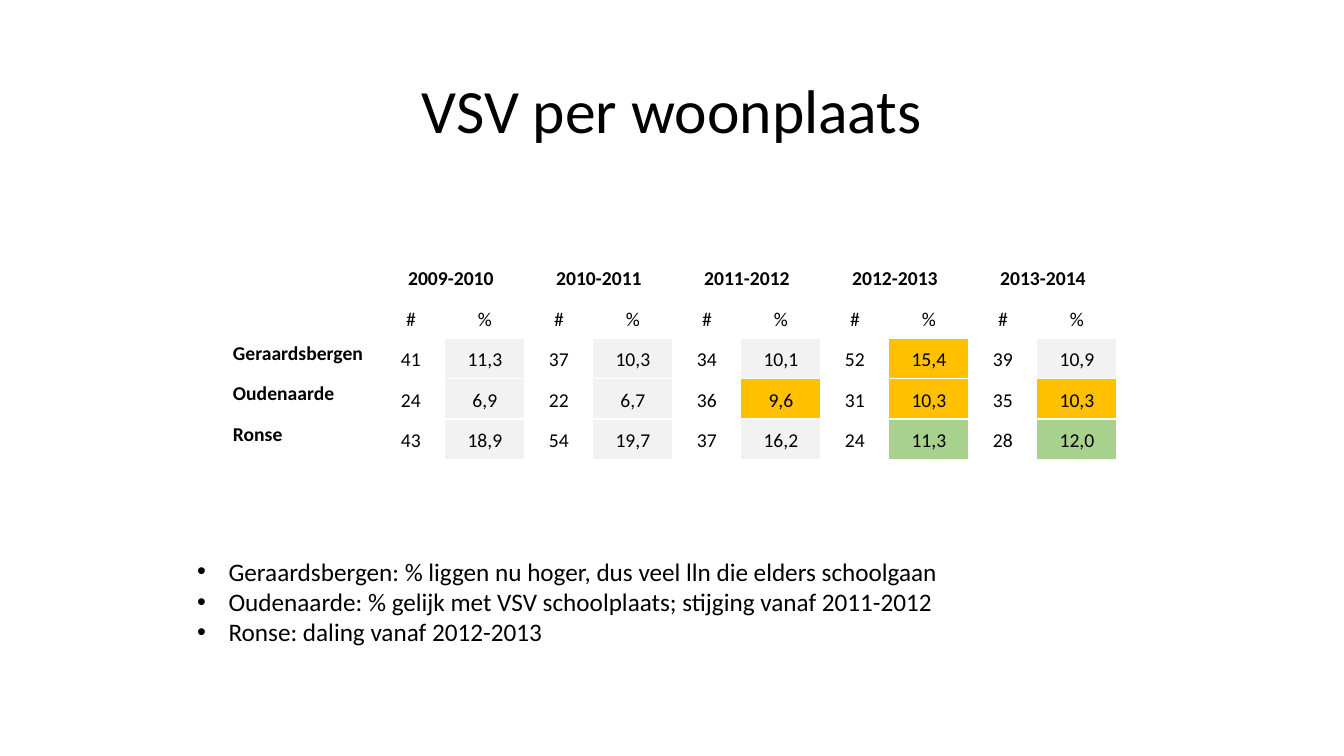
from lxml import etree
from pptx import Presentation
from pptx.dml.color import RGBColor
from pptx.enum.text import MSO_ANCHOR, MSO_AUTO_SIZE, PP_ALIGN
from pptx.oxml.ns import qn
from pptx.util import Cm, Pt

CENTER, LEFT = PP_ALIGN.CENTER, PP_ALIGN.LEFT
MIDDLE, TOP = MSO_ANCHOR.MIDDLE, MSO_ANCHOR.TOP
GROW = MSO_AUTO_SIZE.SHAPE_TO_FIT_TEXT

WHITE, GREY, AMBER, GREEN = "FFFFFF", "F2F2F2", "FFC000", "A9D18E"
TITLE_FONT = {"size": Pt(44)}
CELL_FONT = {"size": Pt(14), "bold": False}
HEADING_FONT = {"size": Pt(14), "bold": True}
BULLET_FONT = {"size": Pt(18)}

YEARS = ["2009-2010", "2010-2011", "2011-2012", "2012-2013", "2013-2014"]
TOWNS = {
    "Geraardsbergen": ["41", "11,3", "37", "10,3", "34", "10,1", "52", "15,4", "39", "10,9"],
    "Oudenaarde": ["24", "6,9", "22", "6,7", "36", "9,6", "31", "10,3", "35", "10,3"],
    "Ronse": ["43", "18,9", "54", "19,7", "37", "16,2", "24", "11,3", "28", "12,0"],
}
# Highlighted school years for each town
HIGHLIGHTS = {
    "Geraardsbergen": (AMBER, ["2012-2013"]),
    "Oudenaarde": (AMBER, ["2011-2012", "2012-2013", "2013-2014"]),
    "Ronse": (GREEN, ["2012-2013", "2013-2014"]),
}
REMARKS = [
    "Geraardsbergen: % liggen nu hoger, dus veel lln die elders schoolgaan",
    "Oudenaarde: % gelijk met VSV schoolplaats; stijging vanaf 2011-2012",
    "Ronse: daling vanaf 2012-2013",
]


def color(value):
    return RGBColor.from_string(value)


def write(para, text, font_format, align=LEFT, spacing=1.0):
    para.alignment = align
    para.line_spacing = spacing
    span = para.add_run()
    span.text = text
    for name, value in {"name": "Calibri", **font_format}.items():
        setattr(span.font, name, value)
    span.font.color.rgb = color("000000")


def add_border(cell, side, width):
    line = etree.SubElement(cell._tc.get_or_add_tcPr(), qn("a:" + side), w=str(Pt(width)))
    fill = etree.SubElement(line, qn("a:solidFill"))
    etree.SubElement(fill, qn("a:srgbClr"), val=WHITE)


def style_cell(cell, fill, bottom_width=1):
    cell_format = {"margin_left": Cm(0.13), "margin_right": Cm(0.13),
                   "margin_top": 0, "margin_bottom": 0, "vertical_anchor": MIDDLE}
    for name, value in cell_format.items():
        setattr(cell, name, value)
    for side in ("lnL", "lnR", "lnT"):
        add_border(cell, side, 1)
    add_border(cell, "lnB", bottom_width)
    cell.fill.solid()
    cell.fill.fore_color.rgb = color(fill)


def fill_cell(cell, text, font_format=CELL_FONT, align=CENTER):
    write(cell.text_frame.paragraphs[0], text, font_format, align, 1.15)


def add_title(page, box):
    frame = page.shapes.add_textbox(*box).text_frame
    frame.word_wrap = True
    frame.vertical_anchor = MIDDLE
    write(frame.paragraphs[0], "VSV per woonplaats", TITLE_FONT, CENTER, 0.9)


def cell_fill(row, column):
    if row < 2 or column == 0 or column % 2:
        return WHITE
    highlight, years = HIGHLIGHTS[list(TOWNS)[row - 2]]
    return highlight if YEARS[column // 2 - 1] in years else GREY


def add_figures(page, box):
    row_count, column_count = 2 + len(TOWNS), 1 + 2 * len(YEARS)
    table = page.shapes.add_table(row_count, column_count, *box).table
    table.first_row = table.horz_banding = False
    widths = [Cm(3.76)] + [Cm(1.71), Cm(2.02)] * len(YEARS)
    for column, width in zip(table.columns, widths):
        column.width = width
    for row in range(row_count):
        table.rows[row].height = box[3] // row_count
        for column in range(column_count):
            style_cell(table.cell(row, column), cell_fill(row, column), 1 if row else 3)

    # Year headings, each over a count and a percentage
    for index, year in enumerate(YEARS):
        first = 1 + 2 * index
        table.cell(0, first).merge(table.cell(0, first + 1))
        fill_cell(table.cell(0, first), year, HEADING_FONT)
        fill_cell(table.cell(1, first), "#")
        fill_cell(table.cell(1, first + 1), "%")

    # Towns
    for row, (town, values) in enumerate(TOWNS.items(), 2):
        town_cell = table.cell(row, 0)
        town_cell.vertical_anchor = TOP
        fill_cell(town_cell, town, HEADING_FONT, LEFT)
        for column, value in enumerate(values, 1):
            fill_cell(table.cell(row, column), value)


def add_remarks(page, box):
    frame = page.shapes.add_textbox(*box).text_frame
    frame.word_wrap = True
    frame.auto_size = GROW
    for index, remark in enumerate(REMARKS):
        para = frame.add_paragraph() if index else frame.paragraphs[0]
        write(para, remark, BULLET_FONT)
        properties = para._p.get_or_add_pPr()
        properties.set("marL", str(Cm(0.79)))
        properties.set("indent", str(-Cm(0.79)))
        etree.SubElement(properties, qn("a:buFont"), typeface="Arial")
        etree.SubElement(properties, qn("a:buChar"), char="•")


def main():
    deck = Presentation()
    deck.slide_width, deck.slide_height = Cm(33.87), Cm(19.05)
    page = deck.slides.add_slide(deck.slide_layouts[6])
    add_title(page, (Cm(2.33), Cm(1.01), Cm(29.21), Cm(3.68)))
    add_figures(page, (Cm(5.74), Cm(6.48), Cm(22.41), Cm(5.1)))
    add_remarks(page, (Cm(4.72), Cm(13.89), Cm(23.57), Cm(2.57)))
    deck.save("out.pptx")


if __name__ == "__main__":
    main()
